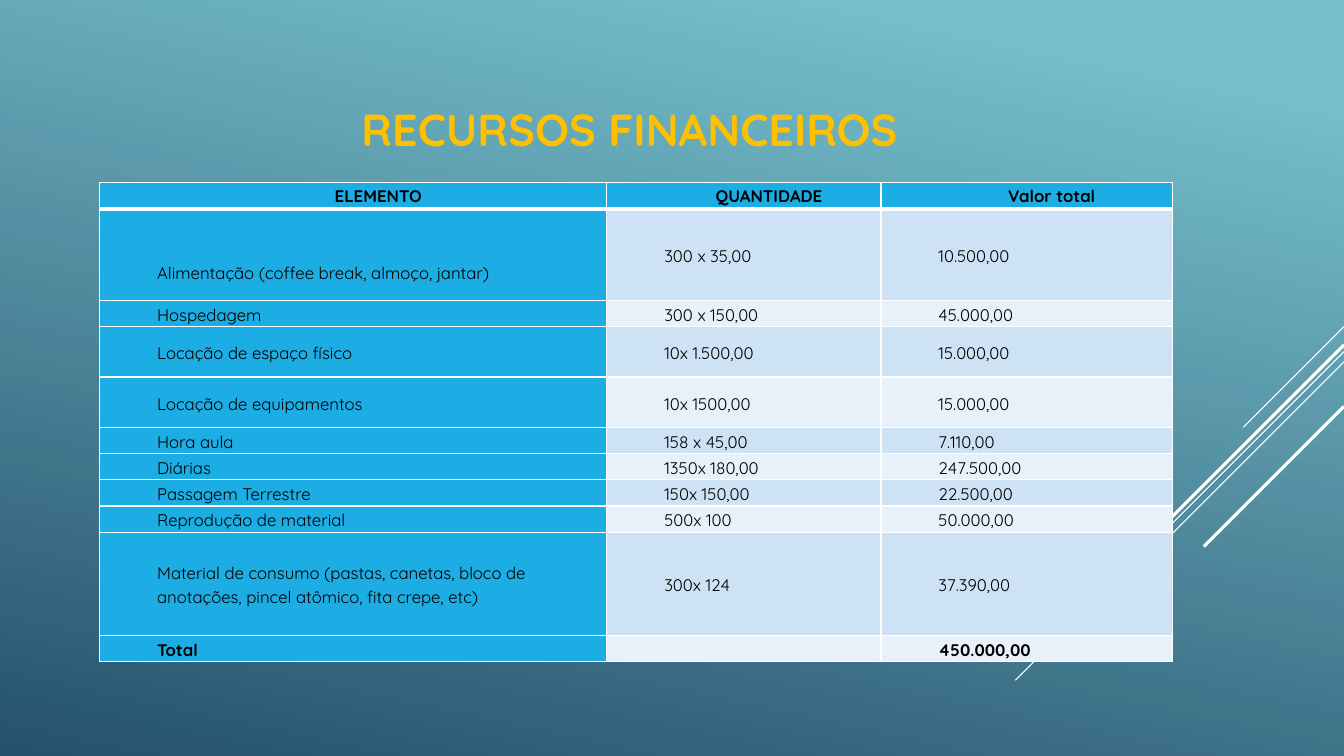
from typing import NamedTuple

from lxml.etree import SubElement
from pptx import Presentation
from pptx.dml.color import RGBColor
from pptx.enum.shapes import MSO_CONNECTOR
from pptx.enum.text import MSO_ANCHOR, PP_ALIGN
from pptx.oxml.ns import qn
from pptx.util import Cm, Pt

FONT = "Quicksand"
WHITE, BLACK, GOLD = "FFFFFF", "000000", "FFC000"
BLUE, BAND_DARK, BAND_LIGHT = "1CADE4", "CDE3F5", "E8F1FA"
SLIDE_W, SLIDE_H = 33.87, 19.05


class Streak(NamedTuple):
    """Diagonal line from the right edge, down to the left at 45 degrees."""
    top: float
    run: float
    width: float


class Row(NamedTuple):
    height: float
    cells: tuple[str, str, str]
    bold: bool = False
    label_drop: float = 0


STREAKS = [
    Streak(8.23, 2.54, 0.75),
    Streak(8.86, 8.28, 0.75),
    Streak(9.12, 5.26, 0.75),
    Streak(8.69, 4.85, 2.25),
    Streak(10.24, 3.53, 2.25),
]
COL_WIDTHS = [12.78, 6.91, 7.34]
LOW, MID = 0.66, 1.27
ROWS = [
    Row(LOW, ("ELEMENTO", "QUANTIDADE", "Valor total"), bold=True),
    Row(2.31, ("Alimentação (coffee break, almoço, jantar)", "300 x 35,00", "10.500,00"),
        label_drop=0.88),
    Row(LOW, ("Hospedagem", "300 x 150,00", "45.000,00")),
    Row(MID, ("Locação de espaço físico", "10x 1.500,00", "15.000,00")),
    Row(MID, ("Locação de equipamentos", "10x 1500,00", "15.000,00")),
    Row(LOW, ("Hora aula", "158 x 45,00", "7.110,00")),
    Row(LOW, ("Diárias", "1350x 180,00", "247.500,00")),
    Row(LOW, ("Passagem Terrestre", "150x 150,00", "22.500,00")),
    Row(LOW, ("Reprodução de material", "500x 100", "50.000,00")),
    Row(2.6, ("Material de consumo (pastas, canetas, bloco de anotações, "
              "pincel atômico, fita crepe, etc)", "300x 124", "37.390,00")),
    Row(LOW, ("Total", "", "450.000,00"), bold=True),
]


def rgb(color: str) -> RGBColor:
    return RGBColor.from_string(color)


def set_font(p, size: float, color: str, bold: bool) -> None:
    p.font.name, p.font.size, p.font.bold = FONT, Pt(size), bold
    p.font.color.rgb = rgb(color)


def set_background(s) -> None:
    fill = s.background.fill
    fill.gradient()
    fill.gradient_angle = 258
    for stop, (position, color) in zip(fill.gradient_stops, [(0.1, "75BECB"), (1, "27526C")]):
        stop.position = position
        stop.color.rgb = rgb(color)


def add_streak(s, streak: Streak) -> None:
    line = s.shapes.add_connector(
        MSO_CONNECTOR.STRAIGHT, Cm(SLIDE_W), Cm(streak.top),
        Cm(SLIDE_W - streak.run), Cm(streak.top + streak.run))
    line.line.color.rgb = rgb(WHITE)
    line.line.width = Pt(streak.width)
    SubElement(line._element.spPr, qn("a:effectLst"))


def set_borders(cell, top: float, bottom: float) -> None:
    tc_pr = cell._tc.get_or_add_tcPr()
    for side, width in {"L": 1, "R": 1, "T": top, "B": bottom}.items():
        ln = SubElement(tc_pr, qn(f"a:ln{side}"), w=str(Pt(width)))
        SubElement(SubElement(ln, qn("a:solidFill")), qn("a:srgbClr"), val=WHITE)


def fill_cell(cell, row: Row, i: int, j: int) -> None:
    header = i == 0
    set_borders(cell, top=3 if i == 1 else 1, bottom=3 if header else 1)
    cell.fill.solid()
    band = BAND_DARK if i % 2 else BAND_LIGHT
    cell.fill.fore_color.rgb = rgb(BLUE if header or j == 0 else band)
    cell.margin_left = cell.margin_right = Cm(0.18)
    cell.margin_top = Cm(row.label_drop if j == 0 else 0)
    cell.margin_bottom = 0
    cell.vertical_anchor = MSO_ANCHOR.TOP if header else MSO_ANCHOR.MIDDLE
    p = cell.text_frame.paragraphs[0]
    p.alignment = PP_ALIGN.CENTER if header else PP_ALIGN.LEFT
    p.line_spacing, p.space_after = 1.15, Pt(8)
    p._p.get_or_add_pPr().set("marL", str(Cm(1.27)))
    set_font(p, 12, BLACK, row.bold)
    if row.cells[j]:
        p.add_run().text = row.cells[j]
    else:
        # An empty cell keeps the text size, so its row stays low
        SubElement(p._p, qn("a:endParaRPr"), sz="1200")


def add_budget_table(s) -> None:
    table = s.shapes.add_table(
        len(ROWS), len(COL_WIDTHS), Cm(2.51), Cm(4.6),
        Cm(sum(COL_WIDTHS)), Cm(sum(row.height for row in ROWS))).table
    for column, width in zip(table.columns, COL_WIDTHS):
        column.width = Cm(width)
    for i, row in enumerate(ROWS):
        table.rows[i].height = Cm(row.height)
        for j in range(len(COL_WIDTHS)):
            fill_cell(table.cell(i, j), row, i, j)


def main() -> None:
    prs = Presentation()
    prs.slide_width, prs.slide_height = Cm(SLIDE_W), Cm(SLIDE_H)
    s = prs.slides.add_slide(prs.slide_layouts[5])

    # Background and diagonal lines
    set_background(s)
    for streak in STREAKS:
        add_streak(s, streak)

    # Title
    title = s.shapes.title
    title.left, title.top, title.width, title.height = Cm(1.9), Cm(1.9), Cm(27.94), Cm(2.69)
    tf = title.text_frame
    tf.text = "RECURSOS FINANCEIROS"
    tf.vertical_anchor = MSO_ANCHOR.MIDDLE
    p = tf.paragraphs[0]
    p.alignment = PP_ALIGN.CENTER
    set_font(p, 32, GOLD, True)

    # Budget table
    add_budget_table(s)
    prs.save("out.pptx")


if __name__ == "__main__":
    main()
